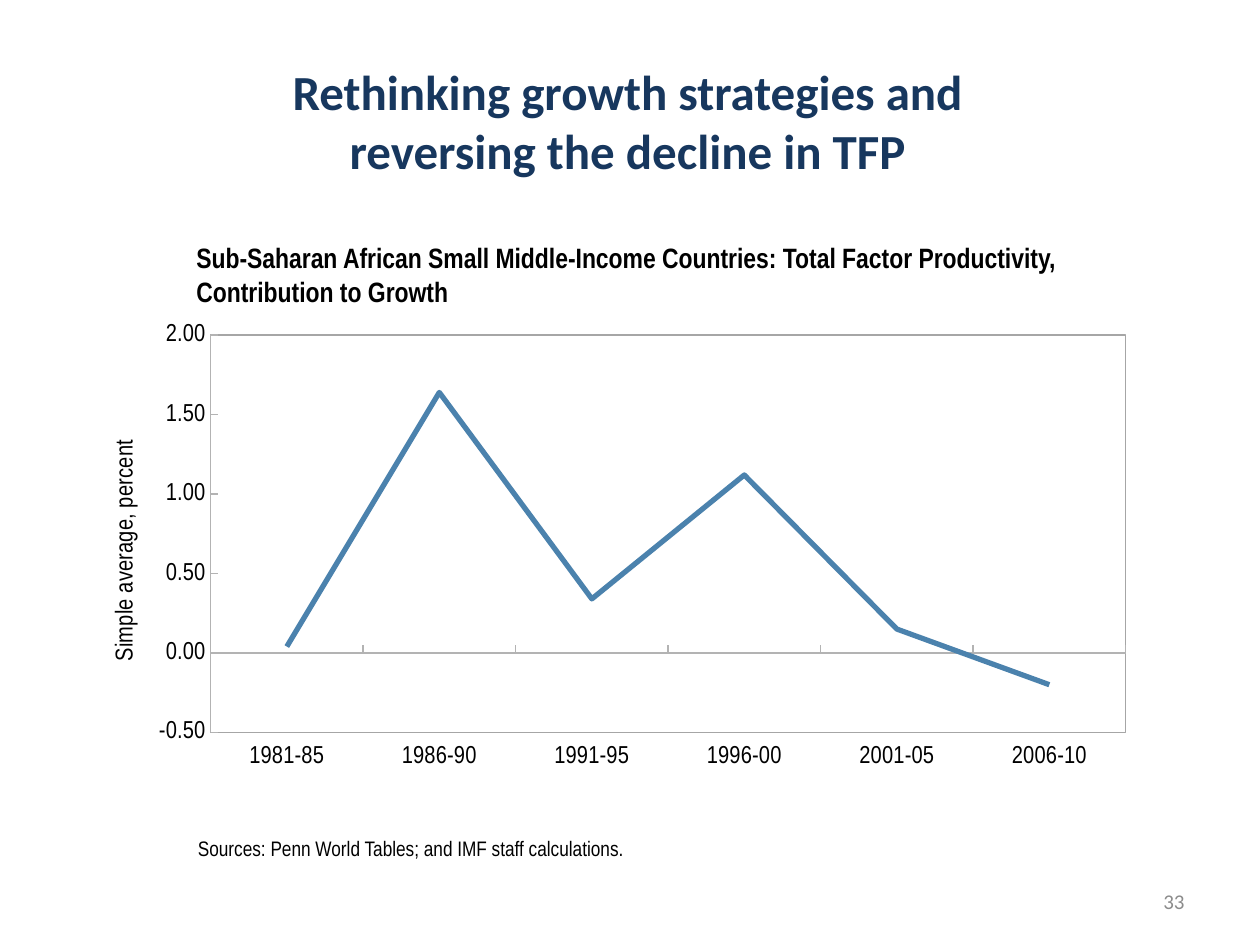
from lxml import etree
from pptx import Presentation
from pptx.chart.data import CategoryChartData
from pptx.dml.color import RGBColor
from pptx.enum.chart import XL_CHART_TYPE as ChartType
from pptx.enum.chart import XL_MARKER_STYLE as Marker
from pptx.enum.chart import XL_TICK_LABEL_POSITION as LabelPosition
from pptx.enum.chart import XL_TICK_MARK as TickMark
from pptx.enum.text import MSO_ANCHOR as Anchor
from pptx.enum.text import PP_ALIGN as Align
from pptx.oxml import parse_xml
from pptx.oxml.ns import nsdecls, qn
from pptx.util import Cm, Pt

COLORS = {
    "title": "17375E",
    "text": "000000",
    "number": "8C8C8C",
    "axis": "B3B3B3",
    "frame": "A6A6A6",
    "line": "4B82AD",
}
NARROW = "Arial Narrow"


def write(box, text, font=NARROW, size=12, color="text", bold=False,
          align=Align.LEFT, anchor=Anchor.TOP, insets=(0.25, 0.13, 0.25, 0.13)):
    frame = box.text_frame
    frame.word_wrap = True
    frame.vertical_anchor = anchor
    (frame.margin_left, frame.margin_top,
     frame.margin_right, frame.margin_bottom) = [Cm(inset) for inset in insets]
    para = frame.paragraphs[0]
    para.alignment = align
    span = para.add_run()
    span.text = text
    span.font.name, span.font.size, span.font.bold = font, Pt(size), bold
    span.font.color.rgb = RGBColor.from_string(COLORS[color])


def place(element, index, **settings):
    """Give a chart part a manual layout, as fractions of the chart."""
    for old in element.findall(qn("c:layout")):
        element.remove(old)
    layout = parse_xml(f"<c:layout {nsdecls('c')}><c:manualLayout/></c:layout>")
    for name, value in settings.items():
        etree.SubElement(layout[0], qn(f"c:{name}")).set("val", str(value))
    element.insert(index, layout)


deck = Presentation()
deck.slide_width, deck.slide_height = Cm(25.4), Cm(19.05)
page = deck.slides.add_slide(deck.slide_layouts[5])

# Title
title = page.shapes.title
title.left, title.top, title.width, title.height = Cm(3.86), Cm(0.84), Cm(17.58), Cm(3.18)
write(title, "Rethinking growth strategies and reversing the decline in TFP",
      font="Calibri", size=28, color="title", bold=True,
      align=Align.CENTER, anchor=Anchor.MIDDLE)

# Productivity chart
data = CategoryChartData(number_format="#,##0.00")
data.categories = ["1981-85", "1986-90", "1991-95", "1996-00", "2001-05", "2006-10"]
data.add_series("Series 1", [0.04, 1.64, 0.34, 1.12, 0.15, -0.2])
chart = page.shapes.add_chart(ChartType.LINE, Cm(1.27), Cm(5.28),
                              Cm(22.2), Cm(11.28), data).chart
chart.has_title = chart.has_legend = False
chart.font.name, chart.font.size = NARROW, Pt(14)
chart.font.color.rgb = RGBColor.from_string(COLORS["text"])

plot = chart.plots[0]
plot.vary_by_categories = False
series = plot.series[0]
series.smooth = False
series.marker.style = Marker.NONE
series.format.line.width = Pt(3)
series.format.line.color.rgb = RGBColor.from_string(COLORS["line"])

# Axes
for axis in (chart.category_axis, chart.value_axis):
    axis.has_major_gridlines = False
    axis.major_tick_mark, axis.minor_tick_mark = TickMark.INSIDE, TickMark.NONE
    axis.format.line.width = Pt(1)
    axis.format.line.color.rgb = RGBColor.from_string(COLORS["axis"])
chart.category_axis.tick_label_position = LabelPosition.LOW
values = chart.value_axis
values.minimum_scale, values.maximum_scale, values.major_unit = -0.5, 2, 0.5
values.tick_labels.number_format = "#,##0.00"
values.tick_labels.number_format_is_linked = False
caption = values.axis_title.text_frame.paragraphs[0].add_run()
caption.text = "Simple average, percent"
caption.font.name, caption.font.size, caption.font.bold = NARROW, Pt(14), False
caption.font.color.rgb = RGBColor.from_string(COLORS["text"])
place(values.axis_title._element, 1, xMode="edge", yMode="edge", x=0.04, y=0.31)

# Plot area position and frame
area = chart._chartSpace.chart.plotArea
place(area, 0, layoutTarget="inner", xMode="edge", yMode="edge",
      x=0.134, y=0.131, w=0.831, h=0.71)
area.append(parse_xml(
    f'<c:spPr {nsdecls("c", "a")}><a:noFill/><a:ln w="12700"><a:solidFill>'
    f'<a:srgbClr val="{COLORS["frame"]}"/></a:solidFill></a:ln></c:spPr>'))

# Chart heading, sources and page number
heading = page.shapes.add_textbox(Cm(3.81), Cm(4.75), Cm(19.13), Cm(1.32))
write(heading, "Sub-Saharan African Small Middle-Income Countries: "
      "Total Factor Productivity, Contribution to Growth",
      size=16, bold=True, insets=(0.15, 0.1, 0, 0))
sources = page.shapes.add_textbox(Cm(3.86), Cm(16.74), Cm(19.61), Cm(0.81))
write(sources, "Sources: Penn World Tables; and IMF staff calculations.",
      insets=(0.13, 0.1, 0, 0))
number = page.shapes.add_textbox(Cm(18.21), Cm(17.65), Cm(5.92), Cm(1.02))
write(number, "33", font="Calibri", color="number",
      align=Align.RIGHT, anchor=Anchor.MIDDLE)

deck.save("out.pptx")
